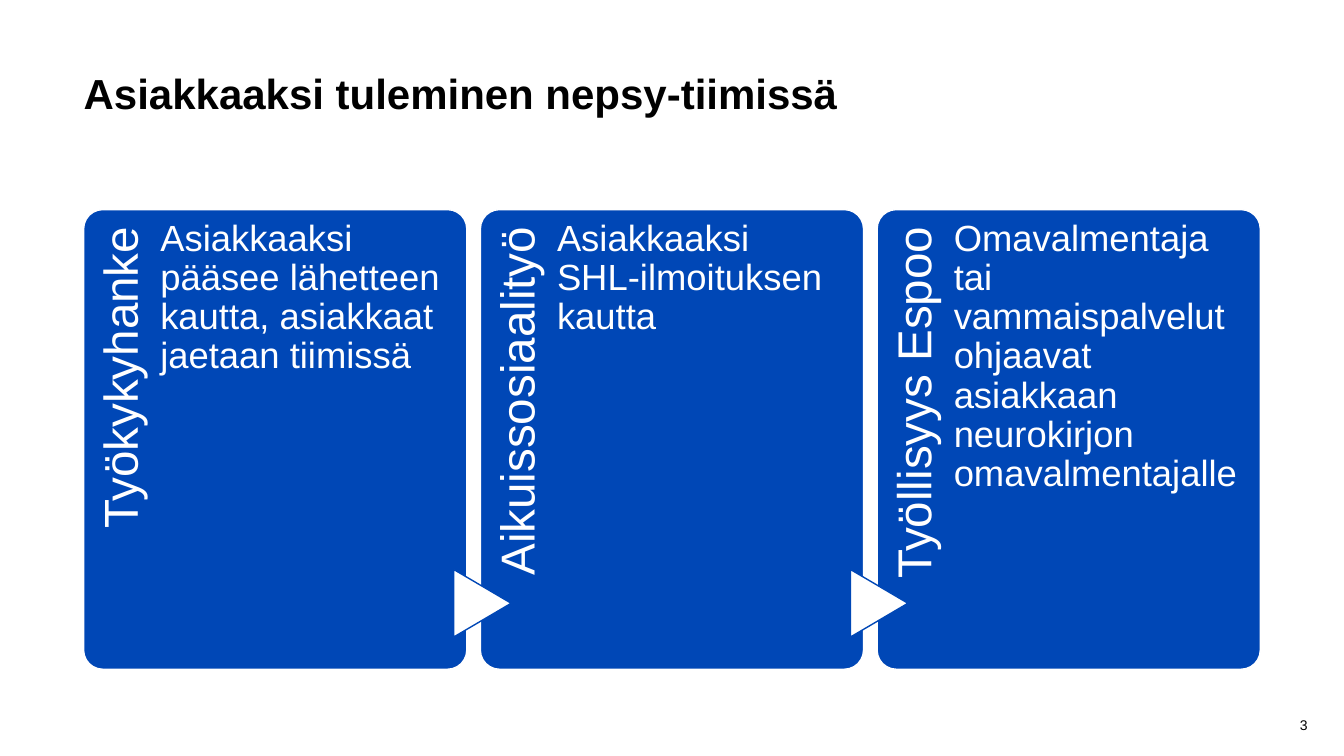
import pptx
import pptx.dml.color
import pptx.enum.shapes
import pptx.enum.text
import pptx.util
from pptx.util import Inches

BLUE, WHITE, BLACK = "0047B6", "FFFFFF", "000000"
LEFT, TOP, CARD_WIDTH, CARD_HEIGHT, CARD_STEP = 0.83, 2.08, 3.8, 4.56, 3.935
LABEL_WIDTH, LABEL_HEIGHT = 3.74, 0.76
ARROW_WIDTH, ARROW_HEIGHT = 0.67, 0.57

ROUTES = [
    ("Työkykyhanke",
     "Asiakkaaksi pääsee lähetteen kautta, asiakkaat jaetaan tiimissä"),
    ("Aikuissosiaalityö",
     "Asiakkaaksi SHL-ilmoituksen kautta"),
    ("Työllisyys Espoo",
     "Omavalmentaja tai vammaispalvelut ohjaavat asiakkaan neurokirjon "
     "omavalmentajalle"),
]


def color(hex_value):
    return pptx.dml.color.RGBColor.from_string(hex_value)


def write(frame, text, size, hex_value, insets=(0, 0, 0, 0), align="LEFT",
          anchor="TOP", spacing=1.0, bold=False):
    frame.word_wrap = True
    frame.auto_size = pptx.enum.text.MSO_AUTO_SIZE.NONE
    frame.vertical_anchor = getattr(pptx.enum.text.MSO_ANCHOR, anchor)
    (frame.margin_left, frame.margin_top,
     frame.margin_right, frame.margin_bottom) = map(Inches, insets)
    paragraph = frame.paragraphs[0]
    paragraph.alignment = getattr(pptx.enum.text.PP_ALIGN, align)
    paragraph.line_spacing = spacing
    run = paragraph.add_run()
    run.text = text
    run.font.name = "Arial"
    run.font.size = pptx.util.Pt(size)
    run.font.bold = bold
    run.font.color.rgb = color(hex_value)


def add_text(slide, box, text, size, hex_value, rotation=0, **style):
    textbox = slide.shapes.add_textbox(*map(Inches, box))
    textbox.rotation = rotation
    write(textbox.text_frame, text, size, hex_value, **style)


def add_block(slide, kind, box, fill, line):
    block = slide.shapes.add_shape(kind, *map(Inches, box))
    block.shadow.inherit = False
    block.fill.solid()
    block.fill.fore_color.rgb = color(fill)
    block.line.color.rgb = color(line)
    block.line.width = pptx.util.Pt(1)
    return block


def add_card(slide, left):
    card = add_block(slide, pptx.enum.shapes.MSO_SHAPE.ROUNDED_RECTANGLE,
                     (left, TOP, CARD_WIDTH, CARD_HEIGHT), BLUE, WHITE)
    card.adjustments[0] = 0.05


def add_label(slide, left, text):
    # The box turns about its centre, so its upright strip starts at the card
    box = (left + (LABEL_HEIGHT - LABEL_WIDTH) / 2,
           TOP + (LABEL_WIDTH - LABEL_HEIGHT) / 2, LABEL_WIDTH, LABEL_HEIGHT)
    add_text(slide, box, text, 34, WHITE, rotation=270,
             insets=(0, 0.13, 0.17, 0), align="RIGHT", spacing=0.9)


def add_arrow(slide, card_left):
    arrow = add_block(slide, pptx.enum.shapes.MSO_SHAPE.FLOWCHART_EXTRACT,
                      (card_left - 0.315, 5.7, ARROW_WIDTH, ARROW_HEIGHT),
                      WHITE, BLUE)
    arrow.rotation = 90


def main():
    deck = pptx.Presentation()
    deck.slide_width, deck.slide_height = Inches(13.33), Inches(7.5)
    slide = deck.slides.add_slide(deck.slide_layouts[5])

    # Title
    title = slide.shapes.title
    title.left, title.top = Inches(LEFT), Inches(0.67)
    title.width, title.height = Inches(9.22), Inches(1.15)
    write(title.text_frame, "Asiakkaaksi tuleminen nepsy-tiimissä", 30, BLACK,
          bold=True)

    # Routes to the team, with an arrow into each one after the first
    for index, (unit, description) in enumerate(ROUTES):
        left = LEFT + index * CARD_STEP
        add_card(slide, left)
        add_label(slide, left, unit)
        if index:
            add_arrow(slide, left)
        add_text(slide, (left + LABEL_HEIGHT, TOP, 2.83, CARD_HEIGHT),
                 description, 26, WHITE, insets=(0, 0.1, 0, 0), spacing=0.9)

    # Page number
    add_text(slide, (12.02, 7.03, 0.95, 0.32), "3", 10, BLACK,
             align="RIGHT", anchor="MIDDLE")

    deck.save("out.pptx")


if __name__ == "__main__":
    main()
